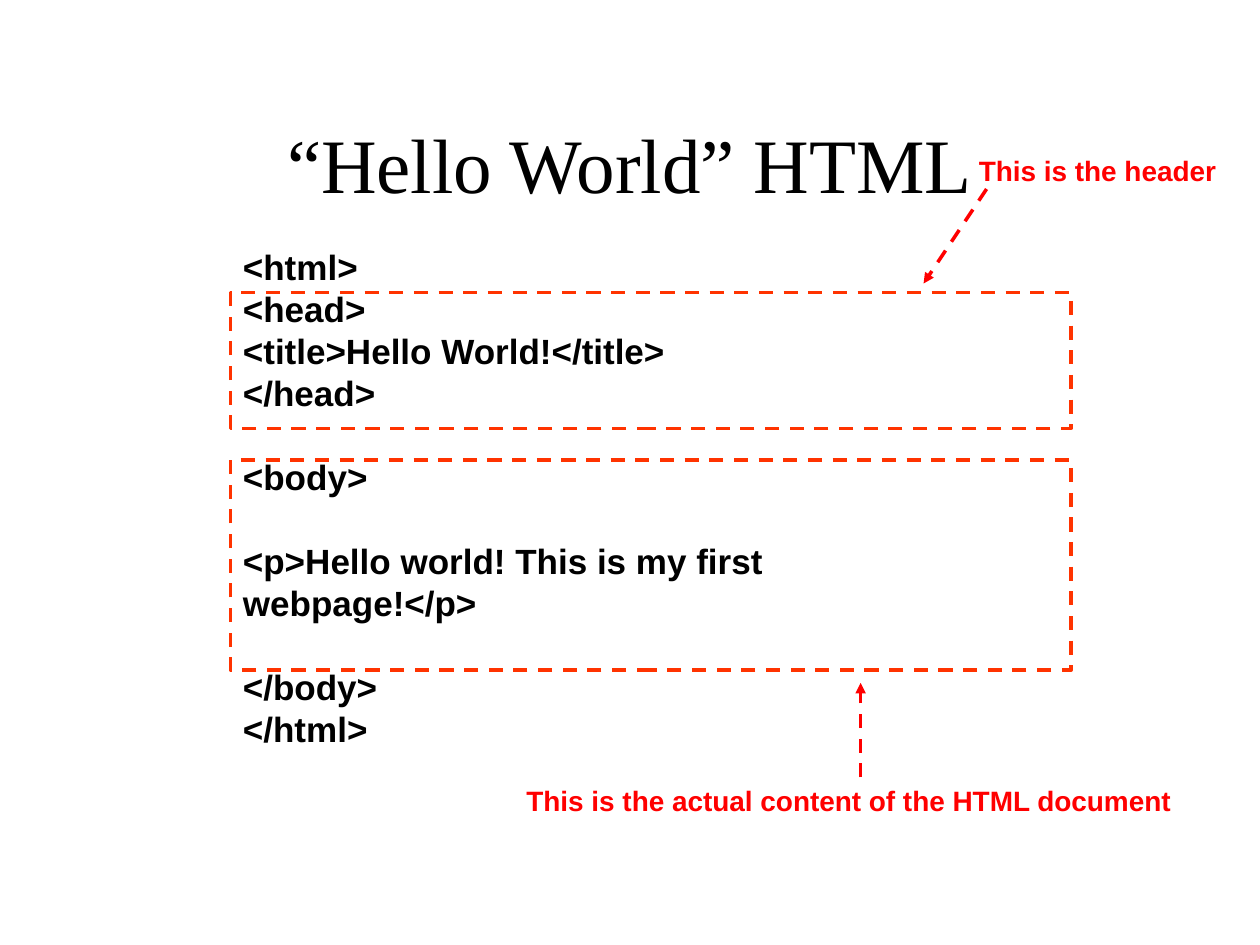
from pptx import Presentation
from pptx import util as u
from pptx.dml.color import RGBColor
from pptx.enum import dml, shapes, text
from pptx.oxml.ns import qn
from lxml import etree

WIDE, HIGH = 10, 7.5
LEFT, SPAN = 1.83, 6.67
ROW = 24
TITLE = "“Hello World” HTML"
CODE = [
    ["<html>", "<head>", "<title>Hello World!</title>", "</head>"],
    ["<body>"],
    ["<p>Hello world! This is my first webpage!</p>"],
    ["</body>", "</html>"],
]
PARTS = [
    dict(frame=(2.32, 1.08), note="This is the header",
         spot=(7.67, 1.17, 2.09, 0.37), arrow=(7.83, 1.5, 7.33, 2.25)),
    dict(frame=(3.65, 1.67), note="This is the actual content of the HTML document",
         spot=(4.08, 6.17, 5.34, 0.37), arrow=(6.83, 6.17, 6.83, 5.42)),
]


def hue(code):
    return RGBColor.from_string(code)


def inch(vals):
    return [u.Inches(v) for v in vals]


def write(para, words, size=20, font="Arial", color="000000", bold=True):
    run = para.add_run()
    run.text = words
    run.font.size = u.Pt(size)
    run.font.name = font
    run.font.bold = bold
    run.font.color.rgb = hue(color)


def label(spot, wrap):
    frame = slide.shapes.add_textbox(*inch(spot)).text_frame
    frame.word_wrap = wrap
    return frame


def dash(line, color):
    line.color.rgb = hue(color)
    line.width = u.Pt(2)
    line.dash_style = dml.MSO_LINE.DASH


def point(ends):
    arrow = slide.shapes.add_connector(shapes.MSO_CONNECTOR.STRAIGHT, *inch(ends))
    dash(arrow.line, "FF0000")
    etree.SubElement(arrow.line._get_or_add_ln(), qn("a:tailEnd"), type="triangle")
    etree.SubElement(arrow._element.spPr, qn("a:effectLst"))


deck = Presentation()
deck.slide_width, deck.slide_height = inch((WIDE, HIGH))
slide = deck.slides.add_slide(deck.slide_layouts[5])

head = slide.shapes.title
head.left, head.top, head.width, head.height = inch((0.75, 0.67, 8.5, 1.25))
head.text_frame.vertical_anchor = text.MSO_ANCHOR.MIDDLE
para = head.text_frame.paragraphs[0]
para.alignment = text.PP_ALIGN.CENTER
write(para, TITLE, size=44, font="Times New Roman", bold=False)

body = label((LEFT, 1.9, 6.2, 3.77), True)
for b, block in enumerate(CODE):
    for r, words in enumerate(block):
        para = body.add_paragraph() if b or r else body.paragraphs[0]
        para.line_spacing = u.Pt(ROW)
        para.space_before = u.Pt(ROW if b and not r else 0)
        write(para, words)

for part in PARTS:
    top, tall = part["frame"]
    box = slide.shapes.add_shape(
        shapes.MSO_SHAPE.RECTANGLE, *inch((LEFT, top, SPAN, tall)))
    box.shadow.inherit = False
    box.fill.background()
    dash(box.line, "FF3300")
    note = label(part["spot"], False)
    write(note.paragraphs[0], part["note"], size=16, color="FF0000")
    point(part["arrow"])

deck.save("out.pptx")
